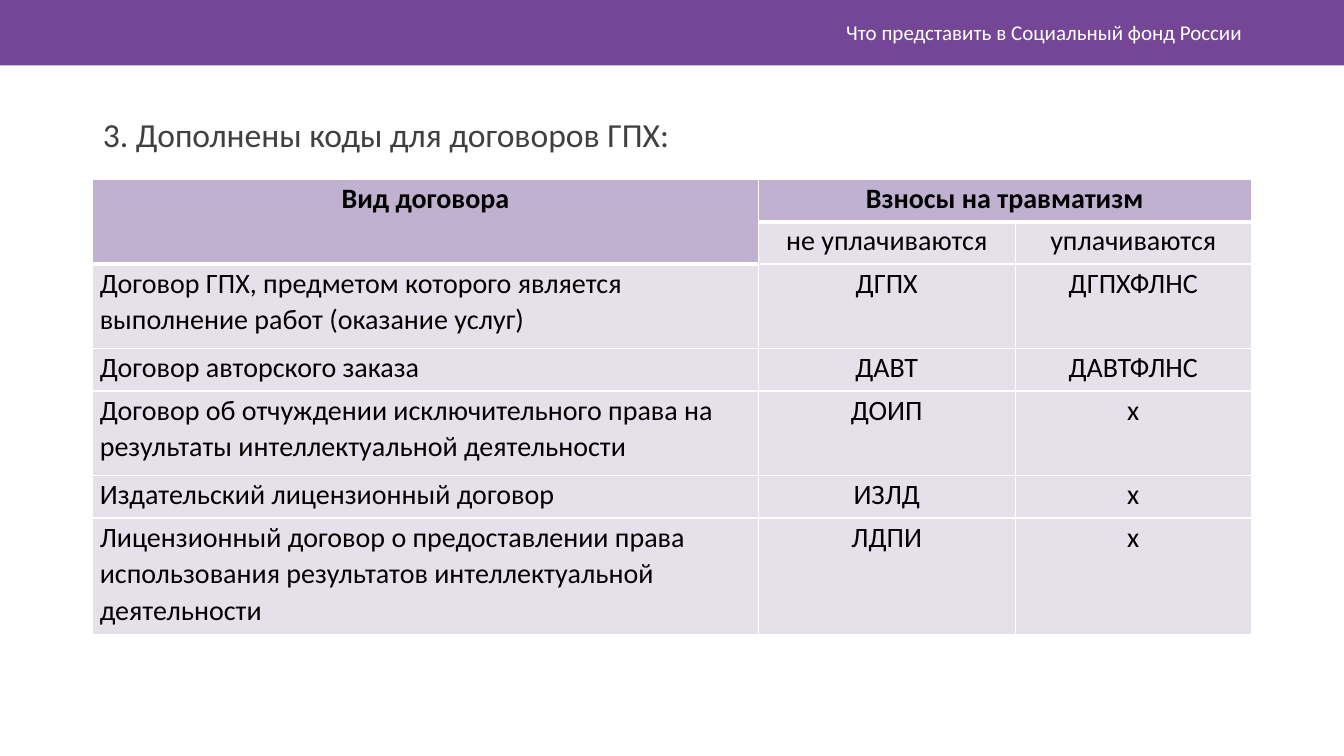
from dataclasses import dataclass

from lxml import etree
from pptx import Presentation
from pptx.dml.color import RGBColor
from pptx.enum.shapes import MSO_SHAPE
from pptx.enum.text import MSO_ANCHOR, MSO_AUTO_SIZE, PP_ALIGN
from pptx.oxml.ns import qn
from pptx.util import Inches, Pt

LEFT, CENTER, RIGHT = PP_ALIGN.LEFT, PP_ALIGN.CENTER, PP_ALIGN.RIGHT
TOP, MIDDLE = MSO_ANCHOR.TOP, MSO_ANCHOR.MIDDLE
NO_AUTOFIT = MSO_AUTO_SIZE.NONE
RECTANGLE = MSO_SHAPE.RECTANGLE
TITLE_AND_CONTENT = 1


@dataclass(frozen=True)
class Theme:
    font: str = "Calibri"
    band: str = "764696"
    white: str = "FFFFFF"
    body_text: str = "404040"
    table_text: str = "000000"
    header_fill: str = "987DB3"
    header_opacity: int = 60
    cell_fill: str = "E6E0EB"
    title_size: int = 15
    body_size: int = 24
    table_size: int = 20
    thin_border: int = 1
    thick_border: int = 3


@dataclass(frozen=True)
class ContractRow:
    height: float
    contract: str
    unpaid: str
    paid: str


THEME = Theme()
COLUMN_WIDTHS = (6.6, 2.55, 2.34)
ROWS = (
    ContractRow(0.42, "Вид договора", "Взносы на травматизм", ""),
    ContractRow(0.42, "", "не уплачиваются", "уплачиваются"),
    ContractRow(0.84, "Договор ГПХ, предметом которого является выполнение работ (оказание услуг)",
                "ДГПХ", "ДГПХФЛНС"),
    ContractRow(0.42, "Договор авторского заказа", "ДАВТ", "ДАВТФЛНС"),
    ContractRow(0.84, "Договор об отчуждении исключительного права на результаты "
                "интеллектуальной деятельности", "ДОИП", "х"),
    ContractRow(0.42, "Издательский лицензионный договор", "ИЗЛД", "х"),
    ContractRow(1.16, "Лицензионный договор о предоставлении права использования "
                "результатов интеллектуальной деятельности", "ЛДПИ", "х"),
)


def write_text(text_frame, text: str, *, size: int, color: str, bold: bool = False,
               align=LEFT, line_spacing: float = 1.0, space_after: int = 0) -> None:
    text_frame.word_wrap = True
    paragraph = text_frame.paragraphs[0]
    paragraph.alignment = align
    paragraph.line_spacing = line_spacing
    paragraph.space_before = Pt(0)
    paragraph.space_after = Pt(space_after)
    run = paragraph.add_run()
    run.text = text
    run.font.name = THEME.font
    run.font.size = Pt(size)
    run.font.bold = bold
    run.font.color.rgb = RGBColor.from_string(color)


def place(shape, left: float, top: float, width: float, height: float, anchor) -> None:
    shape.left, shape.top = Inches(left), Inches(top)
    shape.width, shape.height = Inches(width), Inches(height)
    shape.text_frame.auto_size = NO_AUTOFIT
    shape.text_frame.vertical_anchor = anchor


def is_header(row: int, column: int) -> bool:
    return row == 0 or (row == 1 and column == 0)


def add_border(cell, side: str, width: int) -> None:
    properties = cell._tc.get_or_add_tcPr()
    line = etree.SubElement(properties, qn(f"a:ln{side}"), w=str(Pt(width)))
    fill = etree.SubElement(line, qn("a:solidFill"))
    etree.SubElement(fill, qn("a:srgbClr"), val=THEME.white)


def format_cell(cell, row: int, column: int) -> None:
    header = is_header(row, column)
    below_header = row > 0 and is_header(row - 1, column)
    widths = {"L": THEME.thin_border, "R": THEME.thin_border,
              "T": THEME.thick_border if below_header else THEME.thin_border,
              "B": THEME.thick_border if header else THEME.thin_border}
    for side, width in widths.items():
        add_border(cell, side, width)
    cell.fill.solid()
    cell.fill.fore_color.rgb = RGBColor.from_string(
        THEME.header_fill if header else THEME.cell_fill)
    if header:
        color = cell._tc.tcPr.find(qn("a:solidFill")).find(qn("a:srgbClr"))
        etree.SubElement(color, qn("a:alpha"), val=str(THEME.header_opacity * 1000))
    cell.margin_left = cell.margin_right = Inches(0.07)
    cell.margin_top = cell.margin_bottom = 0


def add_contract_table(slide) -> None:
    frame = slide.shapes.add_table(
        len(ROWS), len(COLUMN_WIDTHS), Inches(0.92), Inches(1.78),
        Inches(sum(COLUMN_WIDTHS)), Inches(sum(row.height for row in ROWS)))
    table = frame.table
    table.horz_banding = False
    for column, width in zip(table.columns, COLUMN_WIDTHS):
        column.width = Inches(width)
    for row_index, row in enumerate(ROWS):
        table.rows[row_index].height = Inches(row.height)
        for column_index, text in enumerate((row.contract, row.unpaid, row.paid)):
            cell = table.cell(row_index, column_index)
            format_cell(cell, row_index, column_index)
            if text:
                header = is_header(row_index, column_index)
                write_text(cell.text_frame, text, size=THEME.table_size,
                           color=THEME.table_text, bold=header, line_spacing=1.07,
                           align=CENTER if header or column_index else LEFT)
    table.cell(0, 0).merge(table.cell(1, 0))
    table.cell(0, 1).merge(table.cell(0, 2))


def main() -> None:
    presentation = Presentation()
    presentation.slide_width, presentation.slide_height = Inches(13.33), Inches(7.5)
    slide = presentation.slides.add_slide(presentation.slide_layouts[TITLE_AND_CONTENT])
    title, body = slide.shapes.title, slide.placeholders[1]

    # Top band, behind the title
    band = slide.shapes.add_shape(RECTANGLE, 0, 0, presentation.slide_width, Inches(0.65))
    band.shadow.inherit = False
    band.fill.solid()
    band.fill.fore_color.rgb = RGBColor.from_string(THEME.band)
    band.line.fill.background()
    title._element.addprevious(band._element)

    # Title in the band
    place(title, 3.54, 0.12, 8.88, 0.4, MIDDLE)
    write_text(title.text_frame, "Что представить в Социальный фонд России",
               size=THEME.title_size, color=THEME.white, align=RIGHT)

    # Lead line without a bullet
    place(body, 0.92, 1.13, 11.5, 5.85, TOP)
    properties = body.text_frame.paragraphs[0]._p.get_or_add_pPr()
    properties.set("marL", "0")
    properties.set("indent", "0")
    etree.SubElement(properties, qn("a:buNone"))
    write_text(body.text_frame, "3. Дополнены коды для договоров ГПХ:",
               size=THEME.body_size, color=THEME.body_text, line_spacing=0.9, space_after=8)

    # Contract codes
    add_contract_table(slide)
    presentation.save("out.pptx")


if __name__ == "__main__":
    main()
